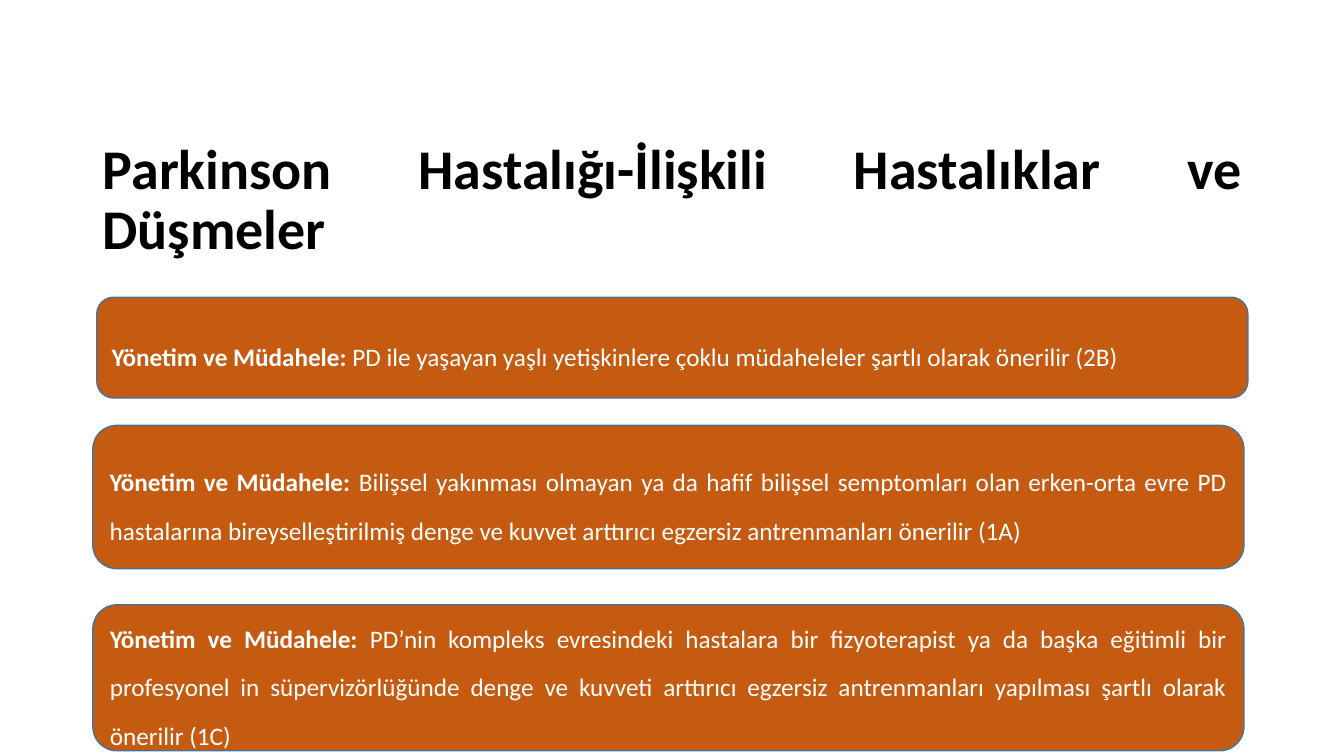
"""Build the slide on Parkinson-related diseases and falls."""
from dataclasses import dataclass

import pptx
import pptx.dml.color
import pptx.enum.shapes
import pptx.enum.text
import pptx.util
from pptx.util import Cm

BLACK = pptx.dml.color.RGBColor(0x00, 0x00, 0x00)
WHITE = pptx.dml.color.RGBColor(0xFF, 0xFF, 0xFF)
ORANGE = pptx.dml.color.RGBColor(0xC5, 0x5A, 0x11)
BLUE = pptx.dml.color.RGBColor(0x43, 0x73, 0x9E)

HEADING = "Parkinson Hastalığı-İlişkili Hastalıklar ve Düşmeler"
LABEL = "Yönetim ve Müdahele: "
CARD_WIDTH = Cm(29.01)


@dataclass(frozen=True)
class Recommendation:
    left: pptx.util.Length
    top: pptx.util.Length
    height: pptx.util.Length
    advice: str


RECOMMENDATIONS = [
    Recommendation(
        Cm(2.44), Cm(7.49), Cm(2.54),
        "PD ile yaşayan yaşlı yetişkinlere çoklu müdaheleler şartlı olarak önerilir (2B)",
    ),
    Recommendation(
        Cm(2.34), Cm(10.72), Cm(3.61),
        "Bilişsel yakınması olmayan ya da hafif bilişsel semptomları olan erken-orta evre PD "
        "hastalarına bireyselleştirilmiş denge ve kuvvet arttırıcı egzersiz antrenmanları "
        "önerilir (1A)",
    ),
    Recommendation(
        Cm(2.34), Cm(15.24), Cm(3.68),
        "PD’nin kompleks evresindeki hastalara bir fizyoterapist ya da başka eğitimli bir "
        "profesyonel in süpervizörlüğünde denge ve kuvveti arttırıcı egzersiz antrenmanları "
        "yapılması şartlı olarak önerilir (1C)",
    ),
]


def write_text(
    frame: pptx.text.text.TextFrame,
    parts: list[tuple[str, bool]],
    size: int,
    color: pptx.dml.color.RGBColor,
    spacing: float,
) -> None:
    """Fill a frame with one justified paragraph of bold and regular parts."""
    frame.word_wrap = True
    frame.vertical_anchor = pptx.enum.text.MSO_ANCHOR.MIDDLE
    paragraph = frame.paragraphs[0]
    paragraph.alignment = pptx.enum.text.PP_ALIGN.JUSTIFY
    paragraph.line_spacing = spacing
    for words, bold in parts:
        run = paragraph.add_run()
        run.text = words
        run.font.color.rgb = color
        font_format = {"name": "Calibri", "size": pptx.util.Pt(size), "bold": bold}
        for attribute, value in font_format.items():
            setattr(run.font, attribute, value)


def draw_recommendation(
    slide: pptx.slide.Slide, recommendation: Recommendation
) -> None:
    """Draw one rounded card with its label and advice."""
    card = slide.shapes.add_shape(
        pptx.enum.shapes.MSO_SHAPE.ROUNDED_RECTANGLE,
        recommendation.left, recommendation.top, CARD_WIDTH, recommendation.height,
    )
    card.shadow.inherit = False
    card.fill.solid()
    card.fill.fore_color.rgb = ORANGE
    card.line.color.rgb = BLUE
    card.line.width = pptx.util.Pt(1)
    parts = [(LABEL, True), (recommendation.advice, False)]
    write_text(card.text_frame, parts, 18, WHITE, 1.6)


def main() -> None:
    """Create the presentation and save it."""
    presentation = pptx.Presentation()
    presentation.slide_width = Cm(33.87)
    presentation.slide_height = Cm(19.05)
    slide = presentation.slides.add_slide(presentation.slide_layouts[6])
    heading = slide.shapes.add_textbox(Cm(2.34), Cm(3.23), Cm(29.21), Cm(3.68))
    write_text(heading.text_frame, [(HEADING, True)], 40, BLACK, 0.9)
    for recommendation in RECOMMENDATIONS:
        draw_recommendation(slide, recommendation)
    presentation.save("out.pptx")


if __name__ == "__main__":
    main()
